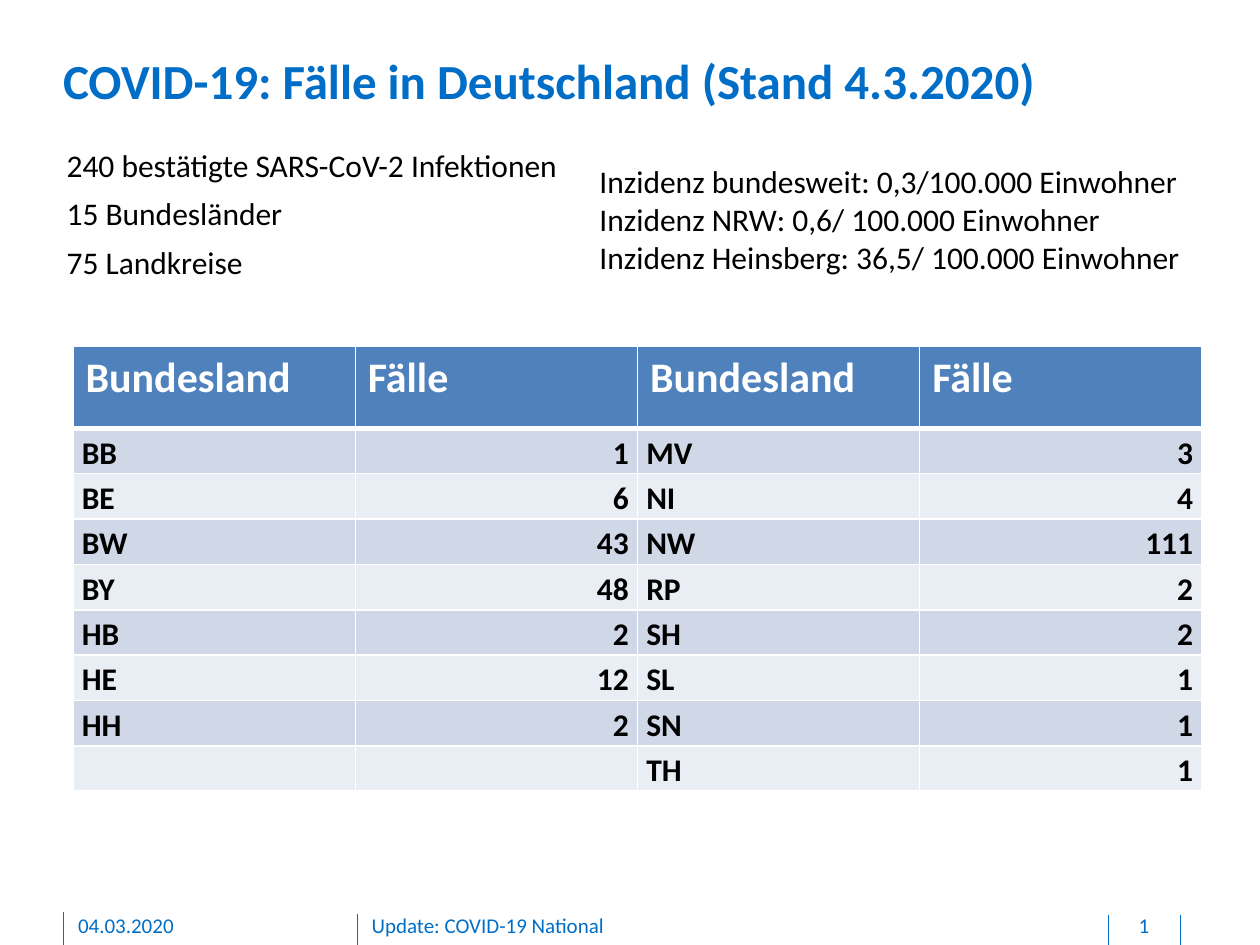
from dataclasses import dataclass
from typing import Optional

from lxml.etree import SubElement
from pptx import Presentation
from pptx.dml.color import RGBColor
from pptx.enum.shapes import MSO_CONNECTOR
from pptx.enum.text import MSO_AUTO_SIZE, PP_ALIGN
from pptx.oxml.ns import qn
from pptx.util import Inches, Pt


@dataclass(frozen=True)
class Theme:
    font: str = "Calibri"
    blue: str = "006EC7"
    black: str = "000000"
    white: str = "FFFFFF"
    header: str = "4F81BD"
    bands: tuple = ("D0D8E8", "E9EDF4")
    title: int = 28
    heading: int = 24
    body: int = 18
    footer: int = 12


T = Theme()


@dataclass(frozen=True)
class TextBlock:
    box: tuple
    paragraphs: tuple
    size: int
    color: str
    bold: bool = False
    margins: tuple = (0.1, 0.05, 0.1, 0.05)
    align: Optional[PP_ALIGN] = None
    space_before: int = 0
    grow: bool = False
    wrap: bool = True


@dataclass(frozen=True)
class Divider:
    x: float
    top: float


FOOTER = dict(size=T.footer, color=T.blue, margins=(0, 0, 0, 0.05))
BODY = dict(size=T.body, color=T.black, grow=True)

TEXTS = (
    TextBlock((2.95, 7.24, 5.67, 0.21), ("Update: COVID-19 National",), **FOOTER),
    TextBlock((8.81, 7.24, 0.54, 0.21), ("1",), align=PP_ALIGN.CENTER, **FOOTER),
    TextBlock((0.62, 7.24, 2.03, 0.21), ("04.03.2020",), **FOOTER),
    TextBlock((0.5, 0.4, 8.85, 0.47), ("COVID-19: Fälle in Deutschland (Stand 4.3.2020)",),
              T.title, T.blue, bold=True, margins=(0, 0, 0, 0), grow=True),
    TextBlock((0.43, 1.11, 4.28, 1.18),
              ("240 bestätigte SARS-CoV-2 Infektionen", "15 Bundesländer", "75 Landkreise"),
              space_before=6, **BODY),
    TextBlock((4.66, 1.24, 4.86, 1.01),
              ("Inzidenz bundesweit: 0,3/100.000 Einwohner\n"
               "Inzidenz NRW: 0,6/ 100.000 Einwohner\n"
               "Inzidenz Heinsberg: 36,5/ 100.000 Einwohner",), wrap=False, **BODY),
)
DIVIDERS = (Divider(0.5, 7.24), Divider(2.84, 7.25), Divider(8.8, 7.26), Divider(9.37, 7.26))

HEADINGS = ("Bundesland", "Fälle") * 2
CASES = (
    ("BB", "1", "MV", "3"),
    ("BE", "6", "NI", "4"),
    ("BW", "43", "NW", "111"),
    ("BY", "48", "RP", "2"),
    ("HB", "2", "SH", "2"),
    ("HE", "12", "SL", "1"),
    ("HH", "2", "SN", "1"),
    ("", "", "TH", "1"),
)
TABLE_LEFT, TABLE_TOP, COLUMN_WIDTH = 0.58, 2.75, 2.24
HEADER_HEIGHT, ROW_HEIGHT = 0.65, 0.36


def set_attributes(target, values: dict) -> None:
    for name, value in values.items():
        setattr(target, name, value)


def style_runs(p, size: int, color: str, bold: bool) -> None:
    for r in p.runs:
        set_attributes(r.font, {"name": T.font, "size": Pt(size), "bold": bold})
        r.font.color.rgb = RGBColor.from_string(color)


def set_margins(target, margins: tuple) -> None:
    sides = ("margin_left", "margin_top", "margin_right", "margin_bottom")
    set_attributes(target, dict(zip(sides, map(Inches, margins))))


def add_text(s, block: TextBlock) -> None:
    tf = s.shapes.add_textbox(*map(Inches, block.box)).text_frame
    tf.word_wrap = block.wrap
    tf.auto_size = MSO_AUTO_SIZE.SHAPE_TO_FIT_TEXT if block.grow else MSO_AUTO_SIZE.NONE
    set_margins(tf, block.margins)
    for i, text in enumerate(block.paragraphs):
        p = tf.add_paragraph() if i else tf.paragraphs[0]
        p.text = text
        p.alignment = block.align
        if i:
            p.space_before = Pt(block.space_before)
        style_runs(p, block.size, block.color, block.bold)


def add_divider(s, divider: Divider) -> None:
    x = Inches(divider.x)
    line = s.shapes.add_connector(MSO_CONNECTOR.STRAIGHT, x, Inches(divider.top), x, Inches(7.5))
    line.line.width = Pt(0.5)
    line.line.color.rgb = RGBColor.from_string(T.blue)
    SubElement(line._element.spPr, qn("a:effectLst"))


def add_borders(cell, row: int) -> None:
    """White 1 pt grid with a 3 pt rule below the header."""
    widths = {"L": 1, "R": 1, "T": 3 if row == 1 else 1, "B": 3 if row == 0 else 1}
    tc_pr = cell._tc.get_or_add_tcPr()
    for side, width in widths.items():
        ln = SubElement(tc_pr, qn(f"a:ln{side}"), w=str(Pt(width)))
        fill = SubElement(ln, qn("a:solidFill"))
        SubElement(fill, qn("a:srgbClr"), val=T.white)


def fill_cell(cell, text: str, row: int, column: int) -> None:
    add_borders(cell, row)
    is_header = row == 0
    cell.fill.solid()
    cell.fill.fore_color.rgb = RGBColor.from_string(T.header if is_header else T.bands[(row - 1) % 2])
    p = cell.text_frame.paragraphs[0]
    p.text = text
    if is_header:
        style_runs(p, T.heading, T.white, True)
        return
    set_margins(cell, (0.07, 0, 0.07, 0))
    set_attributes(p, {
        "alignment": PP_ALIGN.RIGHT if column % 2 else PP_ALIGN.LEFT,
        "line_spacing": 1.15,
        "space_after": Pt(6),
    })
    style_runs(p, T.body, T.black, True)


def add_case_table(s) -> None:
    rows = (HEADINGS, *CASES)
    width = COLUMN_WIDTH * len(HEADINGS)
    height = HEADER_HEIGHT + ROW_HEIGHT * len(CASES)
    box = map(Inches, (TABLE_LEFT, TABLE_TOP, width, height))
    table = s.shapes.add_table(len(rows), len(HEADINGS), *box).table
    for column in table.columns:
        column.width = Inches(COLUMN_WIDTH)
    for i, row in enumerate(rows):
        table.rows[i].height = Inches(ROW_HEIGHT if i else HEADER_HEIGHT)
        for j, text in enumerate(row):
            fill_cell(table.cell(i, j), text, i, j)


def main() -> None:
    prs = Presentation()
    prs.slide_width, prs.slide_height = Inches(10), Inches(7.5)
    s = prs.slides.add_slide(prs.slide_layouts[6])
    for divider in DIVIDERS:
        add_divider(s, divider)
    for block in TEXTS:
        add_text(s, block)
    add_case_table(s)
    prs.save("out.pptx")


if __name__ == "__main__":
    main()
